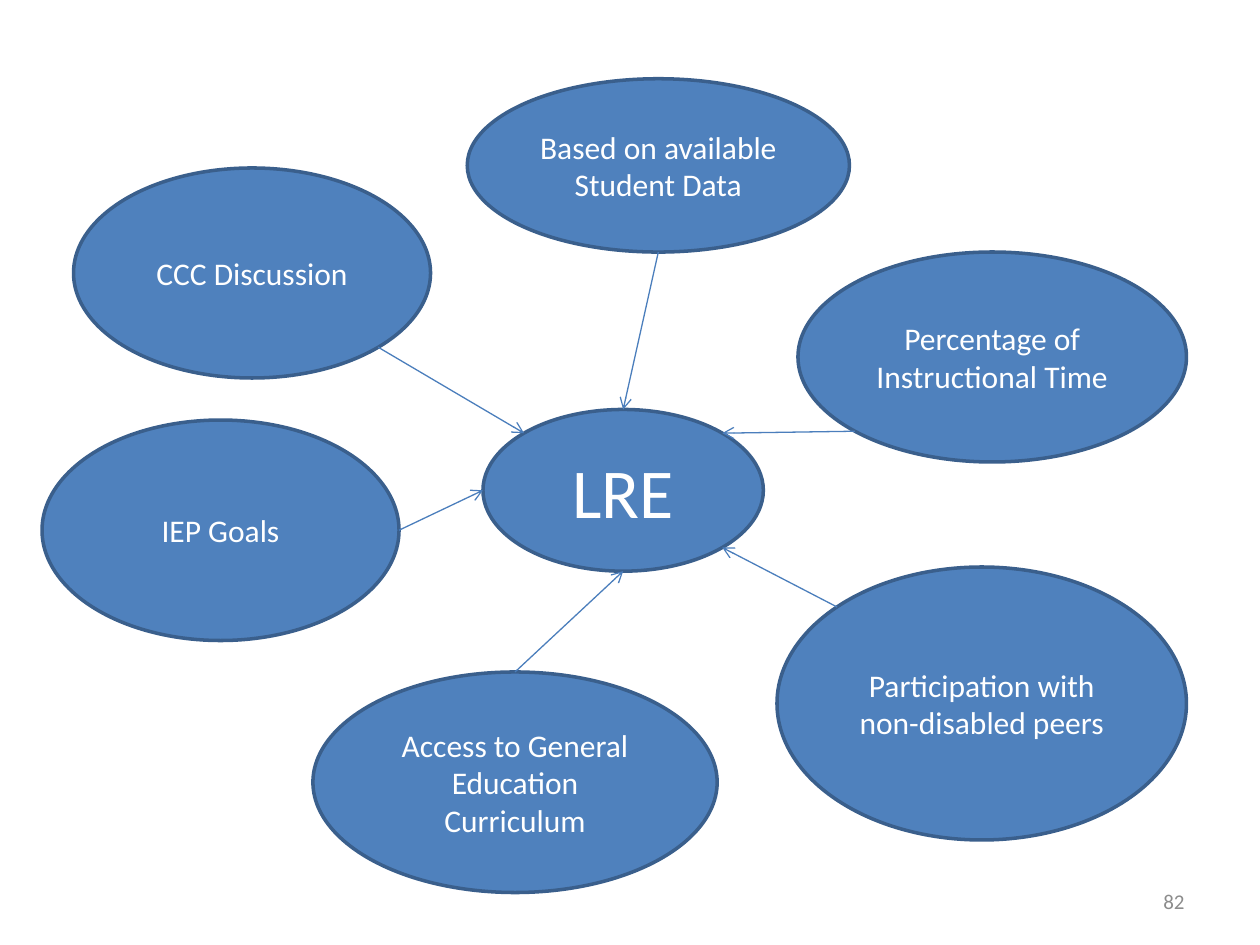
from math import cos, radians, sin

from lxml.etree import SubElement
from pptx import Presentation
from pptx.dml.color import RGBColor
from pptx.enum.shapes import MSO_CONNECTOR, MSO_SHAPE
from pptx.enum.text import MSO_ANCHOR, PP_ALIGN
from pptx.oxml.ns import qn
from pptx.util import Inches, Pt

BLUE = RGBColor(0x4F, 0x81, 0xBD)
EDGE = RGBColor(0x3A, 0x5F, 0x8C)
ARROW = RGBColor(0x4B, 0x7E, 0xBC)
WHITE = RGBColor(0xFF, 0xFF, 0xFF)
GRAY = RGBColor(0x8C, 0x8C, 0x8C)

COLS, ROWS = 120, 90
UNIT = Inches(10) // COLS

# Angles run clockwise from the right end of an oval.
RIGHT, LOW_RIGHT, BOTTOM, LOW_LEFT = 0, 45, 90, 135
LEFT, TOP_LEFT, TOP, TOP_RIGHT = 180, 225, 270, 315

HUB = (46, 39, 26.7, 15.4)
# text, box in grid units, angle the arrow leaves at, angle it meets the hub at
TOPICS = [
    ("Percentage of Instructional Time", (76, 24, 37, 20), LOW_LEFT, TOP_RIGHT),
    ("Participation with non-disabled peers", (74, 54, 39, 26), TOP_LEFT, LOW_RIGHT),
    ("CCC Discussion", (7, 16, 34, 20), LOW_RIGHT, TOP_LEFT),
    ("Based on available Student Data", (44.5, 7.5, 36.4, 16.5), BOTTOM, TOP),
    ("Access to General Education Curriculum", (29.8, 64, 38.5, 21), TOP, BOTTOM),
    ("IEP Goals", (4, 40, 34, 21), RIGHT, LEFT),
]
PAGE = (86, 83.4, 28, 4.8)


def scale(nums):
    return [round(n * UNIT) for n in nums]


def write(frame, text, size, color, align):
    frame.word_wrap = True
    frame.vertical_anchor = MSO_ANCHOR.MIDDLE
    para = frame.paragraphs[0]
    para.alignment = align
    run = para.add_run()
    run.text = text
    run.font.name = "Calibri"
    run.font.size = Pt(size)
    run.font.color.rgb = color


def add_oval(slide, box, text, size):
    oval = slide.shapes.add_shape(MSO_SHAPE.OVAL, *scale(box))
    oval.shadow.inherit = False
    oval.fill.solid()
    oval.fill.fore_color.rgb = BLUE
    oval.line.color.rgb = EDGE
    oval.line.width = Pt(2)
    write(oval.text_frame, text, size, WHITE, PP_ALIGN.CENTER)


def rim(box, angle):
    """Return the point on the oval's edge at the given angle."""
    left, top, width, height = box
    turn = radians(angle)
    return (left + width / 2 * (1 + cos(turn)),
            top + height / 2 * (1 + sin(turn)))


def add_arrow(slide, start, end):
    arrow = slide.shapes.add_connector(
        MSO_CONNECTOR.STRAIGHT, *scale(start + end))
    arrow.line.color.rgb = ARROW
    arrow.line.width = Pt(0.75)
    SubElement(arrow.line._get_or_add_ln(), qn("a:tailEnd"), type="arrow")
    SubElement(arrow._element.spPr, qn("a:effectLst"))


def add_web(slide, hub, topics):
    """Draw the hub, the topics around it and an arrow from each to the hub."""
    add_oval(slide, hub, "LRE", 40)
    for text, box, leave, meet in topics:
        add_oval(slide, box, text, 18)
        add_arrow(slide, rim(box, leave), rim(hub, meet))


def add_page(slide, box, number):
    label = slide.shapes.add_textbox(*scale(box))
    write(label.text_frame, number, 12, GRAY, PP_ALIGN.RIGHT)


def main():
    deck = Presentation()
    deck.slide_width, deck.slide_height = scale((COLS, ROWS))
    slide = deck.slides.add_slide(deck.slide_layouts[6])
    add_page(slide, PAGE, "82")
    add_web(slide, HUB, TOPICS)
    deck.save("out.pptx")


if __name__ == "__main__":
    main()
